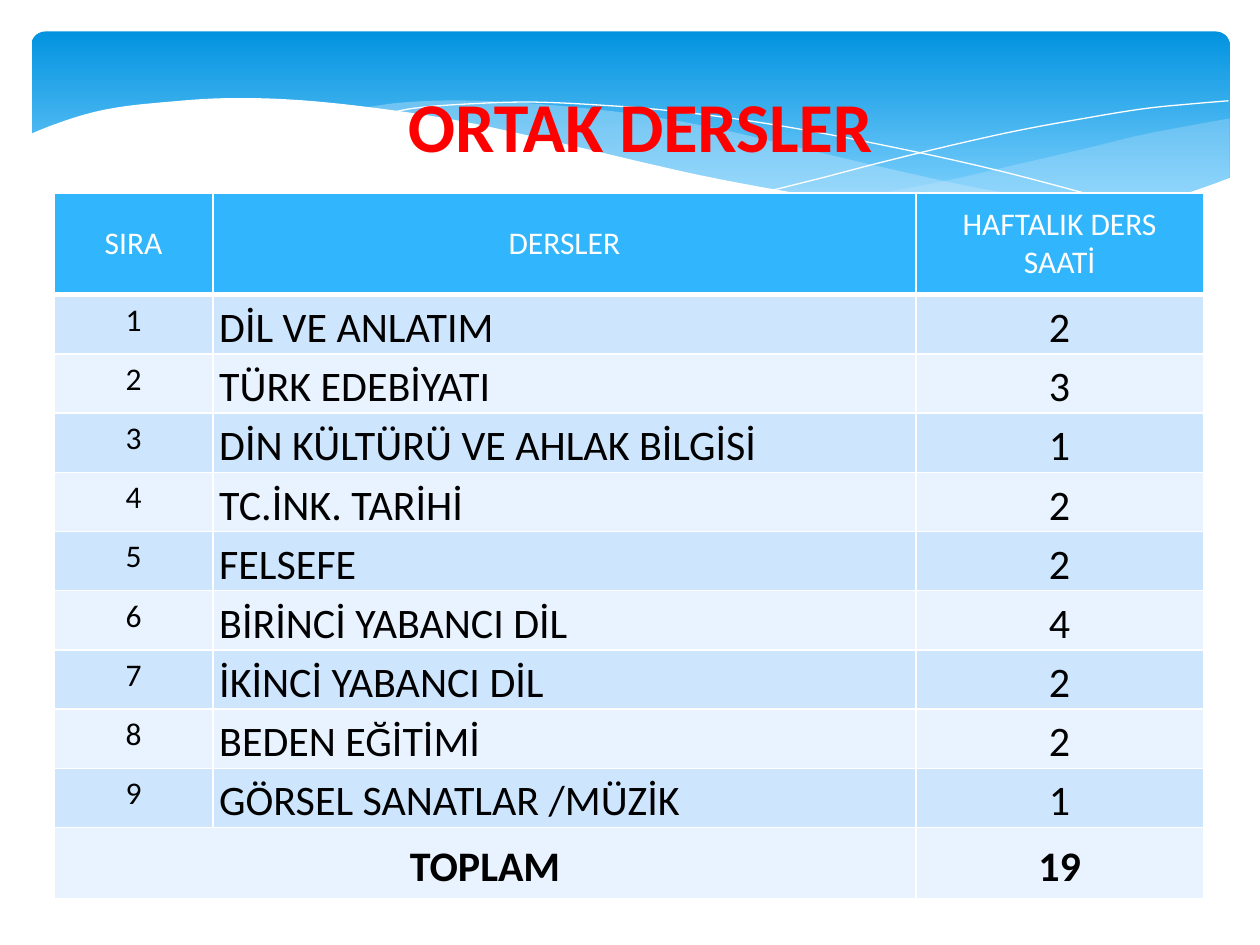
from dataclasses import dataclass
from typing import Optional

from lxml.etree import SubElement
from pptx import Presentation
from pptx.dml.color import RGBColor
from pptx.enum.shapes import MSO_SHAPE as Preset
from pptx.enum.text import MSO_ANCHOR as Anchor, MSO_AUTO_SIZE as AutoSize, PP_ALIGN as Align
from pptx.oxml.ns import qn
from pptx.util import Inches, Pt

WHITE = RGBColor(0xFF, 0xFF, 0xFF)
BLACK = RGBColor(0x00, 0x00, 0x00)
RED = RGBColor(0xFF, 0x00, 0x00)
SKY_TOP = RGBColor(0x02, 0x93, 0xE0)
SKY_BOTTOM = RGBColor(0x83, 0xD3, 0xFE)
MIST = RGBColor(0xC6, 0xE7, 0xFC)
HEADER_BLUE = RGBColor(0x31, 0xB6, 0xFD)
BANDS = (RGBColor(0xCE, 0xE5, 0xFE), RGBColor(0xE8, 0xF3, 0xFF))
FONT = "Calibri"
CURVE_STEPS = 6

Point = tuple[float, float]


@dataclass(frozen=True)
class Wave:
    curves: tuple[tuple[Point, ...], ...]
    fill: Optional[RGBColor] = None
    opacity: int = 100


@dataclass(frozen=True)
class CellStyle:
    size: int
    color: RGBColor = BLACK
    bold: bool = False
    align: Align = Align.CENTER
    anchor: Anchor = Anchor.MIDDLE
    margins: Point = (0.05, 0)
    spacing: float = 1.15


@dataclass(frozen=True)
class Course:
    name: str
    hours: int


WAVES = (
    Wave((
        ((9.76, 0.94), (9.48, 0.99), (9.06, 1.07), (8.61, 1.18), (8.05, 1.31),
         (7.53, 1.43), (7.06, 1.52), (6.61, 1.6)),
        ((6.61, 1.6), (7.05, 1.65), (7.45, 1.69), (7.92, 1.72), (8.35, 1.72),
         (8.72, 1.69), (9.05, 1.63), (9.35, 1.56), (9.63, 1.47), (9.76, 1.41)),
    ), MIST, 29),
    Wave((
        ((8.93, 1.67), (8.37, 1.59), (7.75, 1.49), (7.06, 1.34), (6.29, 1.16),
         (5.69, 1.02), (5.14, 0.92), (4.65, 0.86), (4.2, 0.82), (3.8, 0.8),
         (3.44, 0.8), (3.13, 0.82), (2.86, 0.86)),
        ((2.86, 0.86), (3.42, 0.94), (4.04, 1.06), (4.49, 1.16), (5.3, 1.35),
         (6.01, 1.5), (6.65, 1.61), (7.22, 1.68), (7.73, 1.72), (8.18, 1.73),
         (8.57, 1.71), (8.93, 1.67)),
    ), MIST, 40),
    Wave((
        ((3.09, 0.9), (3.28, 0.86), (3.63, 0.83), (4.16, 0.81), (4.69, 0.83),
         (5.33, 0.88), (6.08, 0.98), (6.95, 1.14), (7.95, 1.36), (9.07, 1.66)),
    )),
    Wave((
        ((6.13, 1.51), (6.53, 1.41), (6.95, 1.3), (7.48, 1.17), (8.06, 1.04),
         (8.66, 0.93), (9.1, 0.86), (9.51, 0.82), (9.75, 0.8)),
    )),
    Wave((
        ((9.77, 1.41), (9.4, 1.54), (8.99, 1.64), (8.5, 1.7), (7.93, 1.71),
         (7.26, 1.67), (6.48, 1.56), (5.55, 1.39), (4.47, 1.14), (3.65, 0.96),
         (2.92, 0.85), (2.3, 0.79), (1.77, 0.78), (1.32, 0.81), (0.95, 0.85),
         (0.67, 0.91), (0.4, 1), (0.23, 1.07)),
        ((0.23, 2.24), (9.77, 2.24)),
    ), WHITE),
)

HEADINGS = ("SIRA", "DERSLER", "HAFTALIK DERS SAATİ")
COURSES = (
    Course("DİL VE ANLATIM", 2),
    Course("TÜRK EDEBİYATI", 3),
    Course("DİN KÜLTÜRÜ VE AHLAK BİLGİSİ", 1),
    Course("TC.İNK. TARİHİ", 2),
    Course("FELSEFE", 2),
    Course("BİRİNCİ YABANCI DİL", 4),
    Course("İKİNCİ YABANCI DİL", 2),
    Course("BEDEN EĞİTİMİ", 2),
    Course("GÖRSEL SANATLAR /MÜZİK", 1),
)
COLUMN_WIDTHS = (1.26, 5.58, 2.28)
ROW_HEIGHTS = (0.81, *[0.47] * len(COURSES), 0.56)

HEADING = CellStyle(18, WHITE, margins=(0.1, 0.05), spacing=1)
NUMBER = CellStyle(18, anchor=Anchor.TOP, margins=(0.1, 0.05), spacing=1)
NAME = CellStyle(24, align=Align.LEFT)
HOURS = CellStyle(24)
TOTAL_LABEL = CellStyle(24, bold=True, anchor=Anchor.TOP, margins=(0.1, 0.05))
TOTAL_HOURS = CellStyle(24, bold=True)


def smooth(knots: tuple[Point, ...]) -> list[Point]:
    if len(knots) < 3:
        return list(knots)
    padded = (knots[0], *knots, knots[-1])
    points = [knots[0]]
    for a, b, c, d in zip(padded, padded[1:], padded[2:], padded[3:]):
        for step in range(1, CURVE_STEPS + 1):
            t = step / CURVE_STEPS
            x, y = (
                (2 * q + (r - p) * t + (2 * p - 5 * q + 4 * r - s) * t**2
                 + (3 * q - p - 3 * r + s) * t**3) / 2
                for p, q, r, s in zip(a, b, c, d)
            )
            points.append((x, y))
    return points


def draw_wave(slide, wave: Wave) -> None:
    start, *rest = [
        (Inches(x), Inches(y)) for curve in wave.curves for x, y in smooth(curve)
    ]
    builder = slide.shapes.build_freeform(*start)
    builder.add_line_segments(rest, close=wave.fill is not None)
    outline = builder.convert_to_shape()
    outline.shadow.inherit = False
    if wave.fill is None:
        outline.fill.background()
        outline.line.color.rgb = WHITE
        outline.line.width = Pt(0)
        return
    outline.line.fill.background()
    outline.fill.solid()
    outline.fill.fore_color.rgb = wave.fill
    if wave.opacity < 100:
        color = outline.element.spPr.find(qn("a:solidFill")).find(qn("a:srgbClr"))
        SubElement(color, qn("a:alpha"), val=str(wave.opacity * 1000))


def draw_sky(slide) -> None:
    sky = slide.shapes.add_shape(
        Preset.ROUNDED_RECTANGLE, Inches(0.25), Inches(0.25), Inches(9.51), Inches(1.56))
    sky.adjustments[0] = 0.07
    sky.shadow.inherit = False
    sky.line.fill.background()
    sky.fill.gradient()
    sky.fill.gradient_angle = 270
    for stop, color, position in zip(
            sky.fill.gradient_stops, (SKY_TOP, SKY_BOTTOM), (0, 0.9)):
        stop.color.rgb = color
        stop.position = position


def write_cell(cell, text: str, style: CellStyle, fill: RGBColor, bottom: int = 1) -> None:
    cell.text = text
    cell.vertical_anchor = style.anchor
    cell.margin_left = cell.margin_right = Inches(style.margins[0])
    cell.margin_top = cell.margin_bottom = Inches(style.margins[1])
    paragraph = cell.text_frame.paragraphs[0]
    paragraph.alignment = style.align
    paragraph.line_spacing = style.spacing
    paragraph.font.name = FONT
    paragraph.font.size = Pt(style.size)
    paragraph.font.bold = style.bold
    paragraph.font.color.rgb = style.color
    properties = cell._tc.get_or_add_tcPr()
    for side, width in (("L", 1), ("R", 1), ("T", 1), ("B", bottom)):
        border = SubElement(properties, qn(f"a:ln{side}"), w=str(Pt(width)))
        SubElement(SubElement(border, qn("a:solidFill")), qn("a:srgbClr"), val=str(WHITE))
    cell.fill.solid()
    cell.fill.fore_color.rgb = fill


def draw_courses(slide) -> None:
    table = slide.shapes.add_table(
        len(ROW_HEIGHTS), len(COLUMN_WIDTHS), Inches(0.43), Inches(1.53),
        Inches(sum(COLUMN_WIDTHS)), Inches(sum(ROW_HEIGHTS))).table
    for column, width in zip(table.columns, COLUMN_WIDTHS):
        column.width = Inches(width)
    for row, height in zip(table.rows, ROW_HEIGHTS):
        row.height = Inches(height)
    for index, heading in enumerate(HEADINGS):
        write_cell(table.cell(0, index), heading, HEADING, HEADER_BLUE, bottom=3)
    for number, course in enumerate(COURSES, 1):
        band = BANDS[(number - 1) % 2]
        write_cell(table.cell(number, 0), str(number), NUMBER, band)
        write_cell(table.cell(number, 1), course.name, NAME, band)
        write_cell(table.cell(number, 2), str(course.hours), HOURS, band)
    last = len(COURSES) + 1
    table.cell(last, 0).merge(table.cell(last, 1))
    total = sum(course.hours for course in COURSES)
    write_cell(table.cell(last, 0), "TOPLAM", TOTAL_LABEL, BANDS[1])
    write_cell(table.cell(last, 2), str(total), TOTAL_HOURS, BANDS[1])


def place_title(slide) -> None:
    title = slide.shapes.title
    title.left, title.top = Inches(0.59), Inches(0.6)
    title.width, title.height = Inches(8.98), Inches(0.77)
    title.text_frame.text = "ORTAK DERSLER"
    title.text_frame.auto_size = AutoSize.SHAPE_TO_FIT_TEXT
    title.text_frame.vertical_anchor = Anchor.MIDDLE
    paragraph = title.text_frame.paragraphs[0]
    paragraph.alignment = Align.CENTER
    paragraph.font.name = FONT
    paragraph.font.size = Pt(40)
    paragraph.font.bold = True
    paragraph.font.color.rgb = RED
    slide.shapes.element.append(title.element)


def main() -> None:
    deck = Presentation()
    deck.slide_width, deck.slide_height = Inches(10), Inches(7.5)
    slide = deck.slides.add_slide(deck.slide_layouts[5])
    draw_sky(slide)
    for wave in WAVES:
        draw_wave(slide, wave)
    draw_courses(slide)
    place_title(slide)
    deck.save("out.pptx")


if __name__ == "__main__":
    main()
